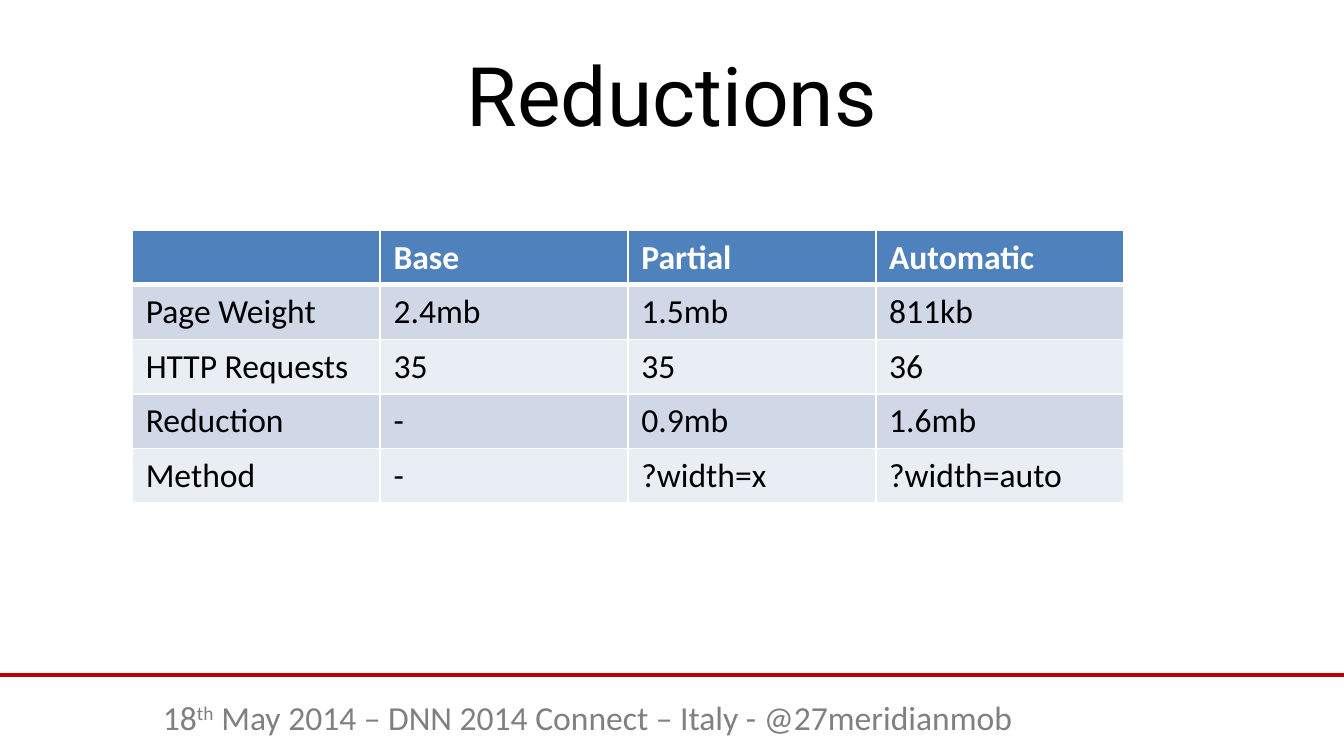
import pptx
import pptx.dml.color
import pptx.enum.shapes
import pptx.enum.text
import pptx.oxml.ns
import pptx.util
from lxml import etree

Pt = pptx.util.Pt
RGBColor = pptx.dml.color.RGBColor
ALIGN = pptx.enum.text.PP_ALIGN
ANCHOR = pptx.enum.text.MSO_ANCHOR

BLACK = RGBColor(0x00, 0x00, 0x00)
WHITE = RGBColor(0xFF, 0xFF, 0xFF)
GREY = RGBColor(0x80, 0x80, 0x80)
RED = RGBColor(0xC0, 0x00, 0x00)
HEADER_BLUE = RGBColor(0x4F, 0x81, 0xBD)
BAND_DARK = RGBColor(0xD0, 0xD8, 0xE8)
BAND_LIGHT = RGBColor(0xE9, 0xED, 0xF4)


def set_font(font, color, **values):
    """Apply the colour and any other font attributes."""
    font.color.rgb = color
    for name, value in values.items():
        setattr(font, name, value)


def add_border(cell, side, width):
    """Draw one white cell edge; side is L, R, T or B."""
    line = etree.SubElement(cell._tc.get_or_add_tcPr(), pptx.oxml.ns.qn(f"a:ln{side}"), w=str(Pt(width)))
    fill = etree.SubElement(line, pptx.oxml.ns.qn("a:solidFill"))
    etree.SubElement(fill, pptx.oxml.ns.qn("a:srgbClr"), val=str(WHITE))


presentation = pptx.Presentation()
presentation.slide_width = Pt(720)
presentation.slide_height = Pt(405)
slide = presentation.slides.add_slide(presentation.slide_layouts[6])

# Footer
footer = slide.shapes.add_textbox(Pt(65.5), Pt(370), Pt(499), Pt(29))
footer.text_frame.word_wrap = True
paragraph = footer.text_frame.paragraphs[0]
paragraph.alignment = ALIGN.CENTER
for text, baseline in [
    ("18", None),
    ("th", "30000"),
    (" May 2014 – DNN 2014 Connect – Italy - @27meridianmob", None),
]:
    run = paragraph.add_run()
    run.text = text
    set_font(run.font, GREY, name="Calibri", size=Pt(18))
    if baseline:
        run.font._element.set("baseline", baseline)

footer_line = slide.shapes.add_connector(
    pptx.enum.shapes.MSO_CONNECTOR.STRAIGHT, Pt(0), Pt(361.5), Pt(720), Pt(361.5)
)
footer_line.line.color.rgb = RED
footer_line.line.width = Pt(2)
etree.SubElement(footer_line._element.spPr, pptx.oxml.ns.qn("a:effectLst"))

# Title
title = slide.shapes.add_textbox(Pt(36), Pt(16.5), Pt(648), Pt(67.5))
title.text_frame.word_wrap = True
title.text_frame.vertical_anchor = ANCHOR.MIDDLE
paragraph = title.text_frame.paragraphs[0]
paragraph.text = "Reductions"
paragraph.alignment = ALIGN.CENTER
set_font(paragraph.runs[0].font, BLACK, name="Roboto", size=Pt(44))

# Table of reductions
rows = [
    ["", "Base", "Partial", "Automatic"],
    ["Page Weight", "2.4mb", "1.5mb", "811kb"],
    ["HTTP Requests", "35", "35", "36"],
    ["Reduction", "-", "0.9mb", "1.6mb"],
    ["Method", "-", "?width=x", "?width=auto"],
]
COLUMN_WIDTH = 132.75
ROW_HEIGHT = 29.2
table = slide.shapes.add_table(
    len(rows), len(rows[0]), Pt(70.9), Pt(123.4),
    Pt(COLUMN_WIDTH * len(rows[0])), Pt(ROW_HEIGHT * len(rows)),
).table
for column in table.columns:
    column.width = Pt(COLUMN_WIDTH)
for row_index, texts in enumerate(rows):
    table.rows[row_index].height = Pt(ROW_HEIGHT)
    is_header = row_index == 0
    band = BAND_DARK if row_index % 2 else BAND_LIGHT
    for column_index, text in enumerate(texts):
        cell = table.cell(row_index, column_index)
        widths = {"L": 1, "R": 1, "T": 3 if row_index == 1 else 1, "B": 3 if is_header else 1}
        for side, width in widths.items():
            add_border(cell, side, width)
        cell.fill.solid()
        cell.fill.fore_color.rgb = HEADER_BLUE if is_header else band
        paragraph = cell.text_frame.paragraphs[0]
        paragraph.text = text
        set_font(paragraph.font, WHITE if is_header else BLACK,
                 name="Calibri", size=Pt(18), bold=is_header)

presentation.save("out.pptx")
